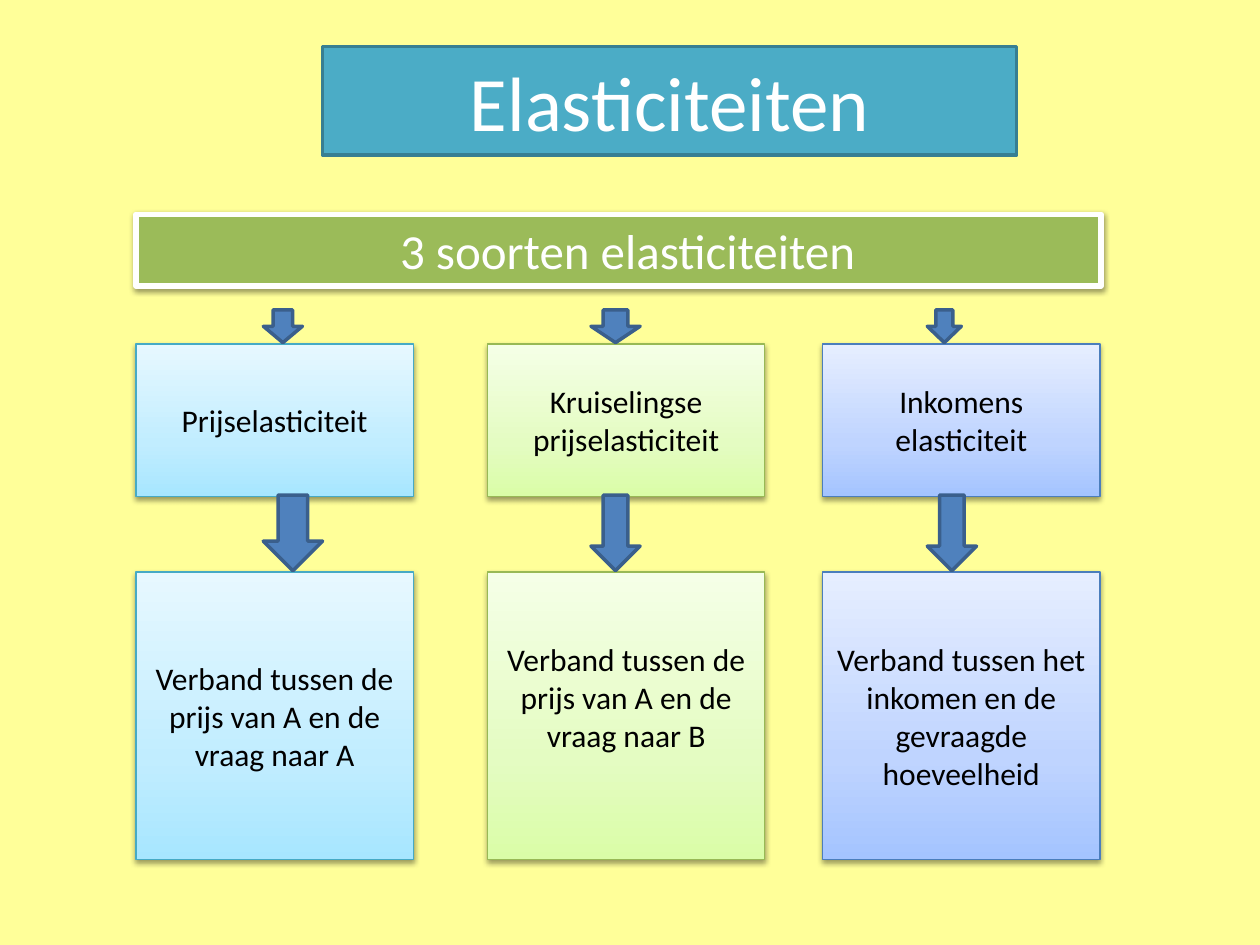
from copy import deepcopy

from lxml.etree import SubElement
from pptx import Presentation
from pptx.dml.color import RGBColor
from pptx.enum.shapes import MSO_SHAPE
from pptx.enum.text import MSO_ANCHOR, PP_ALIGN
from pptx.oxml.ns import qn
from pptx.util import Inches, Pt

THEME = {
    "font": "Calibri",
    "title_size": 44, "banner_size": 28, "box_size": 18,
    "background": "FFFF99", "light": "FFFFFF", "dark": "000000",
    "title": ("4BACC6", "377F92"),
    "banner": "9BBB59",
    "arrow": ("4F81BD", "3A5F8C"),
    # Gradient from bottom to top, then outline
    "blue": (("A7E6FF", "C1EDFF", "E7F8FF"), "46AAC5"),
    "green": (("DAFDA7", "E4FCC2", "F5FFE7"), "98B955"),
    "violet": (("A4C4FF", "BFD4FF", "E6EEFF"), "4B7EBC"),
}
STOPS = (0, 0.35, 1)


def style(sp, fill, line, width, shadow=False):
    """Solid or three-stop gradient fill, outline and optional soft shadow."""
    if isinstance(fill, str):
        sp.fill.solid()
        sp.fill.fore_color.rgb = RGBColor.from_string(fill)
    else:
        sp.fill.gradient()
        sp.fill.gradient_angle = 90
        stops = sp._element.spPr.find(".//" + qn("a:gsLst"))
        stops.append(deepcopy(stops[0]))
        for stop, position, color in zip(sp.fill.gradient_stops, STOPS, fill):
            stop.position = position
            stop.color.rgb = RGBColor.from_string(color)
    sp.line.color.rgb = RGBColor.from_string(line)
    sp.line.width = Pt(width)
    sp.shadow.inherit = False
    if shadow:
        effects = sp._element.spPr.find(qn("a:effectLst"))
        outer = SubElement(effects, qn("a:outerShdw"), blurRad=str(Pt(3.1)),
                           dist=str(Pt(1.6)), dir="5400000", rotWithShape="0")
        color = SubElement(outer, qn("a:srgbClr"), val=THEME["dark"])
        SubElement(color, qn("a:alpha"), val="38000")


def write(sp, text, size, color):
    """Centred text in the theme font."""
    tf = sp.text_frame
    tf.text = text
    tf.word_wrap = True
    tf.vertical_anchor = MSO_ANCHOR.MIDDLE
    p = tf.paragraphs[0]
    p.alignment = PP_ALIGN.CENTER
    font = p.runs[0].font
    font.name, font.size = THEME["font"], Pt(size)
    font.color.rgb = RGBColor.from_string(color)


prs = Presentation()
prs.slide_width, prs.slide_height = Inches(10), Inches(7.5)
s = prs.slides.add_slide(prs.slide_layouts[5])
s.background.fill.solid()
s.background.fill.fore_color.rgb = RGBColor.from_string(THEME["background"])

# Title
title = s.shapes.title
title.left, title.top = Inches(2.56), Inches(0.37)
title.width, title.height = Inches(5.51), Inches(0.86)
style(title, *THEME["title"], 2)
write(title, "Elasticiteiten", THEME["title_size"], THEME["light"])

# Columns: left, palette, arrow left, arrow widths, box texts, extra space below
columns = [
    (1.08, "blue", 2.09, (0.31, 0.47),
     ("Prijselasticiteit",
      "Verband tussen de prijs van A en de vraag naar A"), 0),
    (3.87, "green", 4.69, (0.39, 0.39),
     ("Kruiselingse prijselasticiteit",
      "Verband tussen de prijs van A en de vraag naar B"), 0.3),
    (6.53, "violet", 7.36, (0.27, 0.39),
     ("Inkomens elasticiteit",
      "Verband tussen het inkomen en de gevraagde hoeveelheid"), 0),
]
box_rows = ((2.73, 1.21), (4.54, 2.28))
arrow_rows = ((2.46, 0.26), (3.93, 0.6))

# Boxes: kind of elasticity above its meaning
for left, palette, _, _, texts, space_below in columns:
    for (top, height), text in zip(box_rows, texts):
        sp = s.shapes.add_shape(MSO_SHAPE.RECTANGLE, Inches(left), Inches(top),
                                Inches(2.2), Inches(height))
        style(sp, *THEME[palette], 0.75, shadow=True)
        write(sp, text, THEME["box_size"], THEME["dark"])
    sp.text_frame.margin_bottom = Inches(0.05 + space_below)

# Arrows into each row of boxes
for _, _, left, widths, _, _ in columns:
    for (top, height), width in zip(arrow_rows, widths):
        sp = s.shapes.add_shape(MSO_SHAPE.DOWN_ARROW, Inches(left), Inches(top),
                                Inches(width), Inches(height))
        style(sp, *THEME["arrow"], 2)

# Banner
banner = s.shapes.add_shape(MSO_SHAPE.RECTANGLE, Inches(1.08), Inches(1.7),
                            Inches(7.66), Inches(0.57))
style(banner, THEME["banner"], THEME["light"], 3, shadow=True)
write(banner, "3 soorten elasticiteiten", THEME["banner_size"], THEME["light"])
banner.text_frame.margin_left = Inches(0.24)

prs.save("out.pptx")
